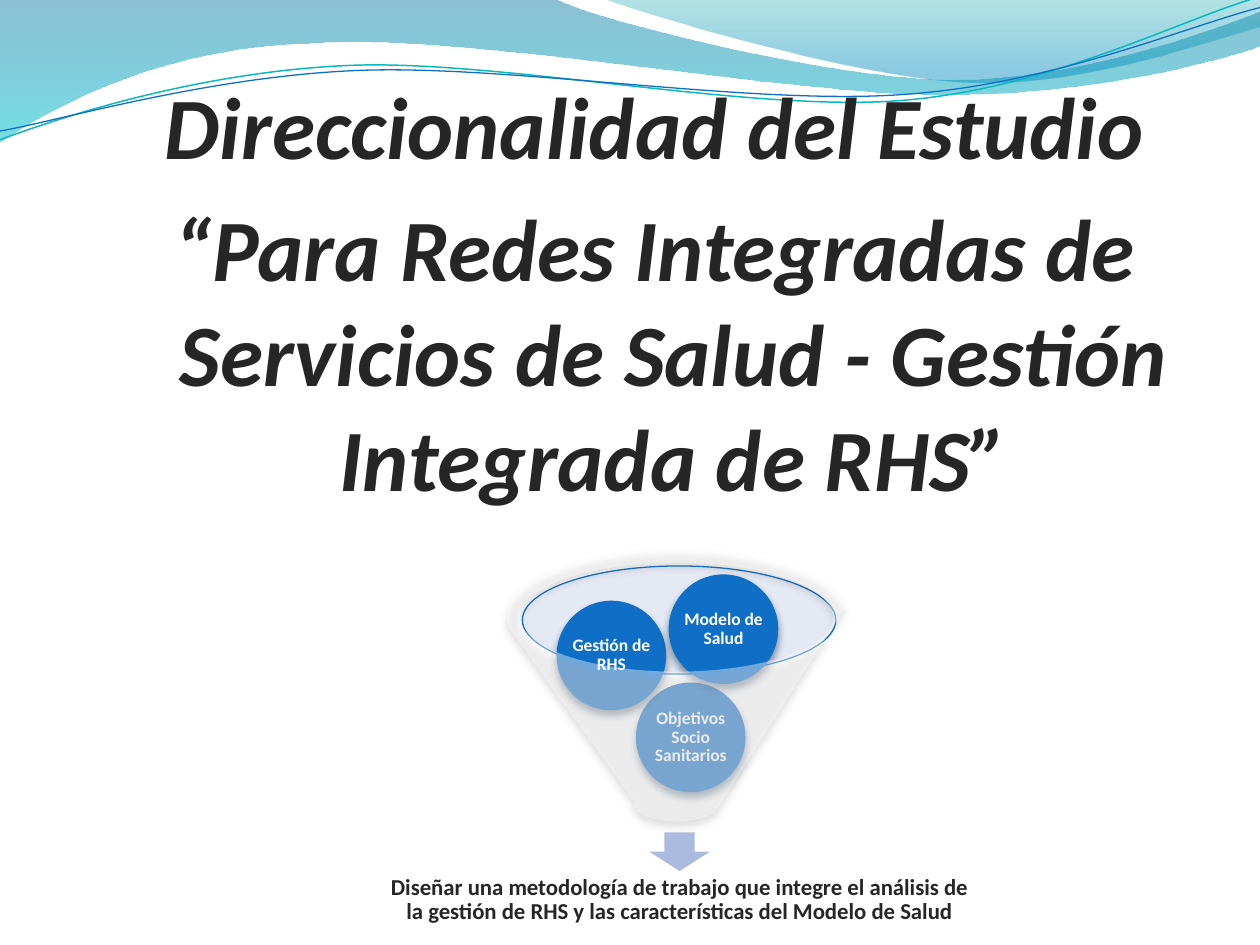
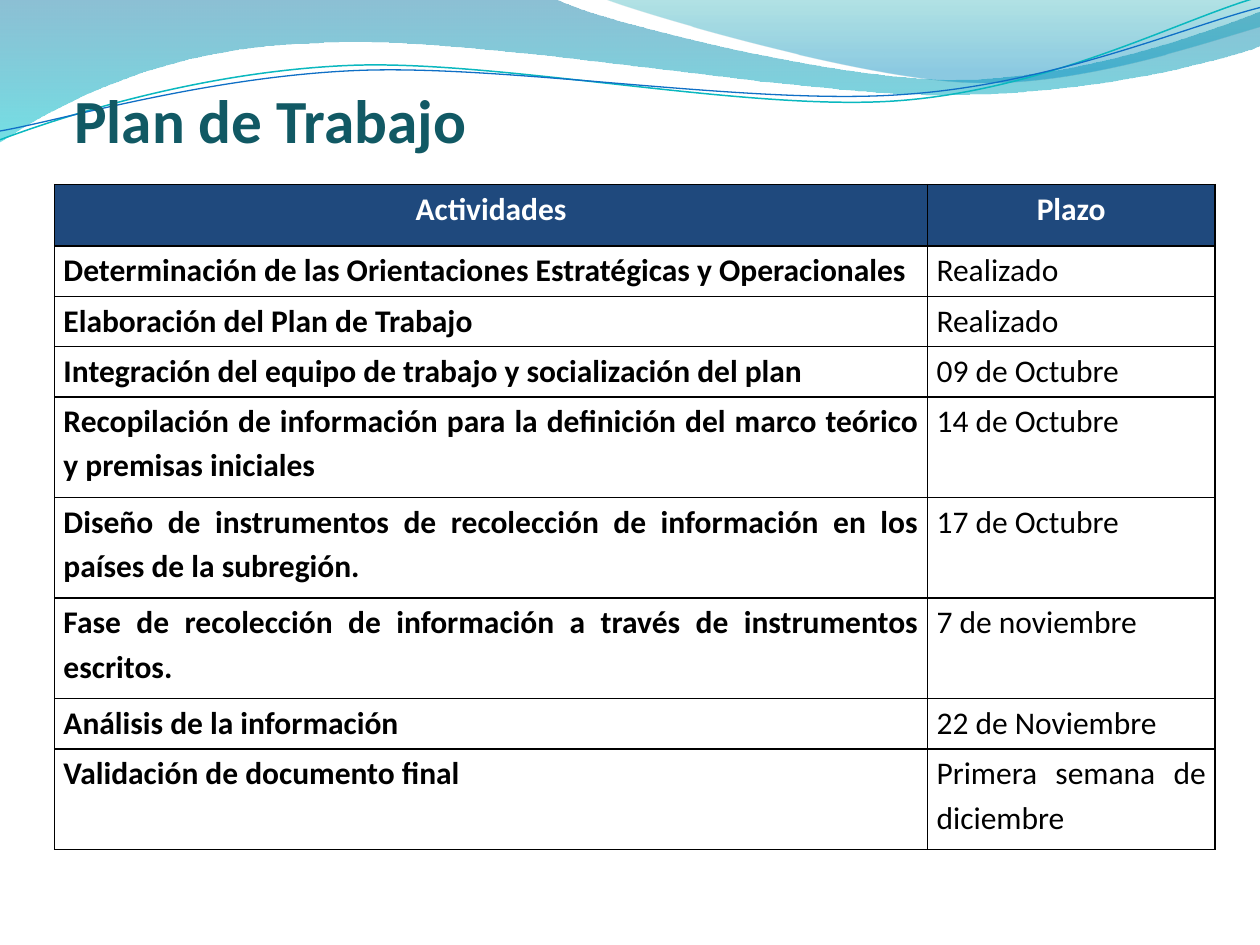
from lxml import etree
from pptx import Presentation
from pptx import util as u
from pptx.dml import color
from pptx.enum import shapes, text
from pptx.oxml import ns

FONT = "Calibri"
INK = "262626"
BLUE = "0F6FC6"
WHITE = "FFFFFF"
BLACK = "000000"
NAVY = "1F497D"
TITLE_TEAL = "115964"
BLANK_LAYOUT = 6
SLIDE_BOX = (0, 0, 25.4, 19.05)

WIDE_WAVE = [
    (0, 0), [(4.4, -0.01)],
    [(4.76, 0.17), (6.64, 0.63), (7.58, 0.63)],
    [(8.53, 0.63), (9.58, 0.26), (10, 0.09)],
    [(10.01, 0.36)],
    [(9.83, 0.44), (8.7, 0.76), (7.46, 0.75)],
    [(6.22, 0.75), (3.82, 0.28), (2.57, 0.34)],
    [(1.29, 0.36), (0.46, 0.83), (-0.01, 1.13)],
    [(0, 0)],
]
RIGHT_WAVE = [
    (4.79, -0.01),
    [(5.09, 0.11), (6.82, 0.62), (7.69, 0.65)],
    [(8.56, 0.69), (9.61, 0.32), (10, 0.21)],
    [(10, 0)], [(4.79, -0.01)],
]
TEAL_STRAND = [
    (0, 1.11),
    [(0.48, 0.93), (1.58, 0.57), (2.77, 0.52)],
    [(3.95, 0.47), (5.93, 0.89), (7.13, 0.8)],
    [(8.33, 0.71), (9.38, 0.15), (9.98, -0.02)],
]
BLUE_STRAND = [
    (0, 1.04),
    [(0.47, 0.96), (1.64, 0.61), (2.83, 0.56)],
    [(4.03, 0.51), (5.97, 0.84), (7.17, 0.75)],
    [(8.36, 0.67), (9.41, 0.21), (10, 0.06)],
]
FILLED_WAVES = [
    (WIDE_WAVE, [(0, "0074A1", 45), (1, "00C6CF", 55)]),
    (RIGHT_WAVE, [(0, "00A1A9", 30), (0.8, "008BBF", 45)]),
]
STRANDS = [(TEAL_STRAND, "0AB8BF", 0.85), (BLUE_STRAND, BLUE, 0.75)]

HEADING = [
    "Direccionalidad del Estudio",
    "“Para Redes Integradas de Servicios de Salud - Gestión Integrada de RHS”",
]
AIM = ("Diseñar una metodología de trabajo que integre el análisis de "
       "la gestión de RHS y las características del Modelo de Salud")
INPUTS = [
    ("Objetivos Socio Sanitarios", 5.33, 2.69),
    ("Gestión de RHS", 3.73, 1.04),
    ("Modelo de Salud", 5.99, 0.51),
]
HEADERS = ("Actividades", "Plazo")
ACTIVITIES = [
    ("Determinación de las Orientaciones Estratégicas y Operacionales", "Realizado", 1),
    ("Elaboración del Plan de Trabajo", "Realizado", 1),
    ("Integración del equipo de trabajo y socialización del plan", "09 de Octubre", 1),
    ("Recopilación de información para la definición del marco teórico y premisas iniciales",
     "14 de Octubre", 2),
    ("Diseño de instrumentos de recolección de información en los países de la subregión.",
     "17 de Octubre", 2),
    ("Fase de recolección de información a través de instrumentos escritos.",
     "7 de noviembre", 2),
    ("Análisis de la información", "22 de Noviembre", 1),
    ("Validación de documento final", "Primera semana de diciembre", 2),
]


def rgb(code):
    return color.RGBColor.from_string(code)


def add_xml(parent, tag, **attributes):
    child = etree.SubElement(parent, ns.qn(tag))
    for key, value in attributes.items():
        child.set(key, str(value))
    return child


def set_alpha(colour_element, percent):
    add_xml(colour_element, "a:alpha", val=percent * 1000)


def place(box, left, top, width, height):
    return [u.Cm(v) for v in (box[0] + left, box[1] + top, width, height)]


def paint(shape, fill=None, alpha=None, line=None, width=0.75):
    shape.shadow.inherit = False
    if fill:
        shape.fill.solid()
        shape.fill.fore_color.rgb = rgb(fill)
        if alpha:
            set_alpha(next(shape._element.spPr.iter(ns.qn("a:srgbClr"))), alpha)
    else:
        shape.fill.background()
    if line:
        shape.line.color.rgb = rgb(line)
        shape.line.width = u.Pt(width)
    else:
        shape.line.fill.background()


def cast_shadow(shape, colour):
    effects = shape._element.spPr.find(ns.qn("a:effectLst"))
    shadow = add_xml(effects, "a:outerShdw", blurRad=u.Pt(4.5), dist=u.Pt(3),
                     dir=5400000, rotWithShape=0)
    set_alpha(add_xml(shadow, "a:srgbClr", val=colour), 48)


def write(paragraph, words, size, colour, bold=True, italic=False,
          align=text.PP_ALIGN.CENTER, spacing=None):
    paragraph.alignment = align
    paragraph.line_spacing = spacing
    run = paragraph.add_run()
    run.text = words
    font = run.font
    font.name, font.size, font.bold, font.italic = FONT, u.Pt(size), bold, italic
    font.color.rgb = rgb(colour)


def add_frame(slide, bounds, margins, anchor=text.MSO_ANCHOR.TOP):
    frame = slide.shapes.add_textbox(*bounds).text_frame
    frame.word_wrap = True
    frame.vertical_anchor = anchor
    (frame.margin_left, frame.margin_top,
     frame.margin_right, frame.margin_bottom) = [u.Cm(m) for m in margins]
    return frame


def bend_segments(shape, segments):
    lines = iter(list(shape._element.spPr.iter(ns.qn("a:lnTo"))))
    for segment in segments:
        group = [next(lines) for _ in segment]
        if len(group) == 3:
            curve = etree.Element(ns.qn("a:cubicBezTo"))
            group[0].addprevious(curve)
            for line in group:
                curve.append(line[0])
                line.getparent().remove(line)


def add_wave(slide, box, outline, closed):
    unit = box[2] / 10
    start, *segments = outline
    points = [(u.Cm(box[0] + x * unit), u.Cm(box[1] + y * unit))
              for x, y in [start] + sum(segments, [])]
    builder = slide.shapes.build_freeform(*points[0])
    builder.add_line_segments(points[1:], close=closed)
    wave = builder.convert_to_shape()
    bend_segments(wave, segments)
    return wave


def add_wave_band(slide, box):
    for outline, stops in FILLED_WAVES:
        wave = add_wave(slide, box, outline, True)
        paint(wave)
        wave.fill.gradient()
        wave.fill.gradient_angle = 270
        for stop, (position, colour, _) in zip(wave.fill.gradient_stops, stops):
            stop.position = position
            stop.color.rgb = rgb(colour)
        for element, stop in zip(wave._element.spPr.iter(ns.qn("a:srgbClr")), stops):
            set_alpha(element, stop[2])
    for outline, colour, width in STRANDS:
        paint(add_wave(slide, box, outline, False), line=colour, width=width)


def add_heading(slide, box):
    frame = add_frame(slide, place(box, 0, 0, *box[2:]), (0.25, 0.13, 0.25, 0.13))
    for index, words in enumerate(HEADING):
        paragraph = frame.add_paragraph() if index else frame.paragraphs[0]
        write(paragraph, words, 50, INK, italic=True)
        paragraph.space_before = u.Pt(10)
        properties = paragraph._p.get_or_add_pPr()
        properties.set("marL", str(u.Cm(0.76)))
        properties.set("indent", str(-u.Cm(0.76)))


def add_funnel_diagram(slide, box):
    preset = shapes.MSO_SHAPE
    middle = text.MSO_ANCHOR.MIDDLE

    def add(kind, *bounds):
        return slide.shapes.add_shape(kind, *place(box, *bounds))

    rim = add(preset.OVAL, 3.04, 0.34, 6.32, 2.18)
    paint(rim, "BDC8E5", 40, line=BLUE)
    arrow = add(preset.DOWN_ARROW, 5.6, 5.71, 1.22, 0.78)
    paint(arrow, "ABBBDF")
    aim = add_frame(slide, place(box, 0, 6.34, box[2], 1.47), [0.25] * 4, middle)
    write(aim.paragraphs[0], AIM, 13, INK, spacing=0.9)
    for words, left, top in INPUTS:
        bounds = (left, top, 2.21, 2.21)
        ball = add(preset.OVAL, *bounds)
        paint(ball, BLUE)
        cast_shadow(ball, "042747")
        label = add_frame(slide, place(box, *bounds), [0.03] * 4, middle)
        write(label.paragraphs[0], words, 10, WHITE, spacing=0.9)
    funnel = add(preset.FUNNEL, 2.72, 0, 6.86, 5.49)
    paint(funnel, WHITE, 40)
    cast_shadow(funnel, "5A5A5A")


def add_title(slide, box, words):
    frame = add_frame(slide, place(box, 0, 0, *box[2:]), (0, 0.13, 0, 0))
    write(frame.paragraphs[0], words, 35, TITLE_TEAL, align=text.PP_ALIGN.LEFT)


def fill_cell(cell, words, colour, bold, align, fill=None):
    cell.margin_left = cell.margin_right = u.Cm(0.18)
    cell.margin_top = cell.margin_bottom = 0
    write(cell.text_frame.paragraphs[0], words, 18, colour, bold, align=align, spacing=1.15)
    properties = cell._tc.get_or_add_tcPr()
    for side in ("a:lnL", "a:lnR", "a:lnT", "a:lnB"):
        border = add_xml(properties, side, w=u.Pt(1))
        add_xml(add_xml(border, "a:solidFill"), "a:srgbClr", val=BLACK)
    if fill:
        cell.fill.solid()
        cell.fill.fore_color.rgb = rgb(fill)
    else:
        cell.fill.background()


def add_schedule(slide, box):
    header_height, deadline_width = 1.24, 5.79
    line_height = (box[3] - header_height) / sum(lines for *_, lines in ACTIVITIES)
    heights = [header_height] + [line_height * lines for *_, lines in ACTIVITIES]
    table = slide.shapes.add_table(len(heights), len(HEADERS),
                                   *place(box, 0, 0, *box[2:])).table
    table.first_row = table.horz_banding = False
    for column, width in zip(table.columns, (box[2] - deadline_width, deadline_width)):
        column.width = u.Cm(width)
    for row, height in zip(table.rows, heights):
        row.height = u.Cm(height)
    for column, words in enumerate(HEADERS):
        fill_cell(table.cell(0, column), words, WHITE, True, text.PP_ALIGN.CENTER, NAVY)
    for row, (*entries, _) in enumerate(ACTIVITIES, 1):
        for column, words in enumerate(entries):
            fill_cell(table.cell(row, column), words, BLACK, column == 0,
                      text.PP_ALIGN.JUSTIFY)


def new_slide(deck):
    slide = deck.slides.add_slide(deck.slide_layouts[BLANK_LAYOUT])
    add_wave_band(slide, SLIDE_BOX)
    return slide


def build_direction_slide(deck):
    slide = new_slide(deck)
    add_heading(slide, (1.7, 1.32, 23.01, 8.99))
    add_funnel_diagram(slide, (7.49, 11.07, 12.4, 7.8))


def build_plan_slide(deck):
    slide = new_slide(deck)
    add_schedule(slide, (1.1, 3.72, 23.39, 13.41))
    add_title(slide, (1.5, 1.52, 22.86, 1.8), "Plan de Trabajo")


def main():
    deck = Presentation()
    deck.slide_width, deck.slide_height = [u.Cm(side) for side in SLIDE_BOX[2:]]
    build_direction_slide(deck)
    build_plan_slide(deck)
    deck.save("out.pptx")


if __name__ == "__main__":
    main()
